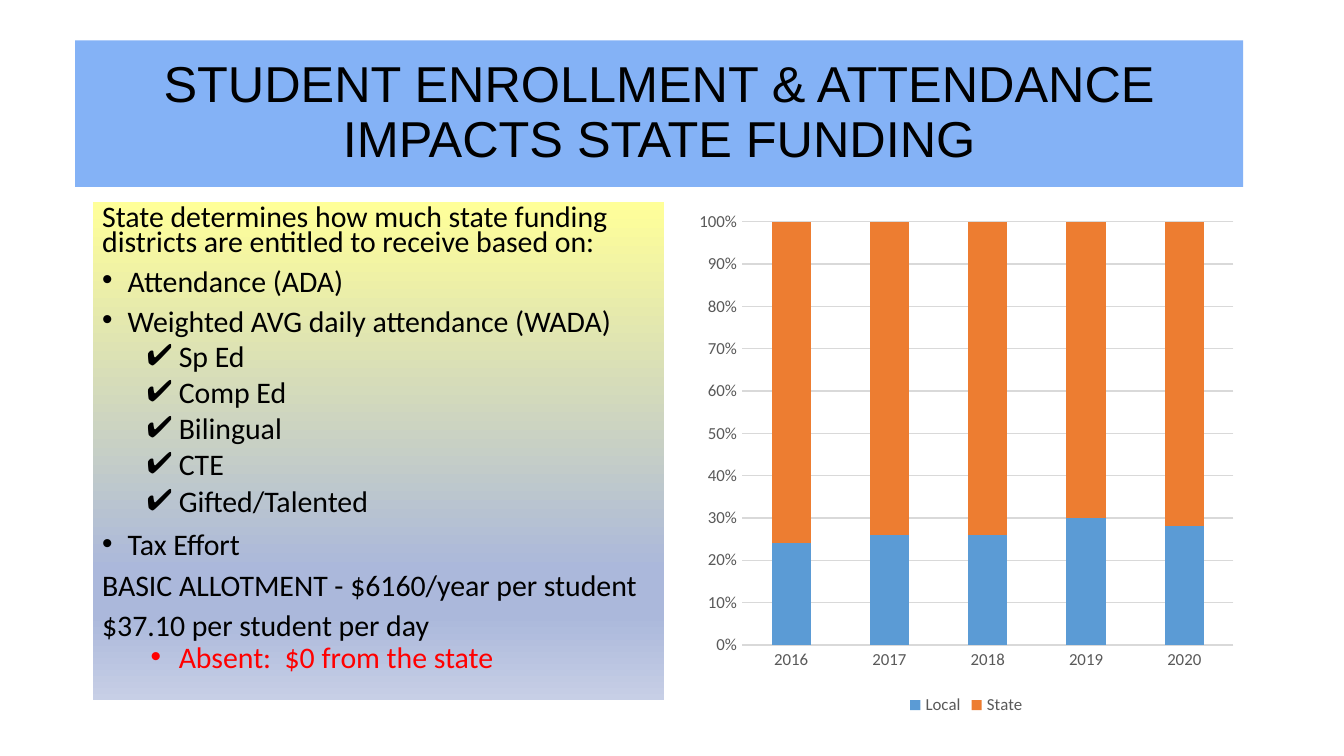
from dataclasses import dataclass

import pptx
import pptx.chart.data
import pptx.dml.color
import pptx.enum.chart
import pptx.enum.text
import pptx.oxml
import pptx.oxml.ns
import pptx.util
from pptx.util import Inches


@dataclass(frozen=True)
class Theme:
    banner: str = "84B2F6"
    text: str = "000000"
    alert: str = "FF0000"
    axis_text: str = "595959"
    grid: str = "D9D9D9"
    local: str = "5B9BD5"
    state: str = "ED7D31"
    panel: tuple = ((0, "FFFF99"), (74, "ABB8DB"), (83, "ABB8DB"), (100, "C7CFE6"))
    title_font: str = "Arial"
    body_font: str = "Calibri"
    title_size: float = 27
    body_size: float = 16
    axis_size: float = 9


@dataclass(frozen=True)
class Box:
    left: float
    top: float
    width: float
    height: float

    def lengths(self) -> tuple:
        return tuple(Inches(v) for v in (self.left, self.top, self.width, self.height))


@dataclass(frozen=True)
class Style:
    level: int = 0
    margin: float = 0
    hanging: float = 0
    spacing: float = 0.7
    before: float = 8
    bullet: str = ""
    color: str = Theme.text


@dataclass(frozen=True)
class Line:
    text: str
    style: Style


THEME = Theme()
INTRO = Style(before=0)
PLAIN = Style()
FACTOR = Style(margin=0.19, hanging=0.19, bullet="•")
EFFORT = Style(margin=0.19, hanging=0.19, bullet="•", spacing=0.8)
PROGRAM = Style(level=1, margin=0.57, hanging=0.24, bullet="✔", spacing=0.8, before=4)
ABSENCE = Style(level=1, margin=0.57, hanging=0.21, bullet="•", before=4, color=THEME.alert)

FUNDING_LINES = [
    Line("State determines how much state funding districts are entitled to receive based on:", INTRO),
    Line("Attendance (ADA)", FACTOR),
    Line("Weighted AVG daily attendance (WADA)", FACTOR),
    *(Line(name, PROGRAM) for name in ("Sp Ed", "Comp Ed", "Bilingual", "CTE", "Gifted/Talented")),
    Line("Tax Effort", EFFORT),
    Line("BASIC ALLOTMENT - $6160/year per student", PLAIN),
    Line("$37.10 per student per day", PLAIN),
    Line("Absent:  $0 from the state", ABSENCE),
]
YEARS = ("2016", "2017", "2018", "2019", "2020")
LOCAL_SHARE = (24, 26, 26, 30, 28)


def rgb(color: str) -> pptx.dml.color.RGBColor:
    return pptx.dml.color.RGBColor.from_string(color)


def set_font(font, name: str, size: float, color: str) -> None:
    font.name = name
    font.size = pptx.util.Pt(size)
    font.color.rgb = rgb(color)


def place(holder, box: Box) -> None:
    holder.left, holder.top, holder.width, holder.height = box.lengths()
    frame = holder.text_frame
    frame.auto_size = pptx.enum.text.MSO_AUTO_SIZE.NONE
    frame.word_wrap = True
    frame.margin_left = frame.margin_right = Inches(0.07)
    frame.margin_top = frame.margin_bottom = Inches(0.04)


def xml(tag: str, attributes: str, content: str = ""):
    namespace = pptx.oxml.ns.nsdecls("a")
    return pptx.oxml.parse_xml(f"<a:{tag} {namespace} {attributes}>{content}</a:{tag}>")


def fill_gradient(holder, stops: tuple) -> None:
    holder.fill.gradient()
    holder.fill.gradient_angle = 270
    stop_list = holder.fill._fill._gradFill.find(pptx.oxml.ns.qn("a:gsLst"))
    for stop in list(stop_list):
        stop_list.remove(stop)
    for percent, color in stops:
        stop_list.append(xml("gs", f'pos="{percent * 1000}"', f'<a:srgbClr val="{color}"/>'))


def format_line(paragraph, line: Line) -> None:
    style = line.style
    paragraph.text = line.text
    paragraph.level = style.level
    paragraph.line_spacing = style.spacing
    paragraph.space_before = pptx.util.Pt(style.before)
    set_font(paragraph.runs[0].font, THEME.body_font, THEME.body_size, style.color)
    properties = paragraph._p.get_or_add_pPr()
    properties.set("marL", str(Inches(style.margin)))
    properties.set("indent", str(-Inches(style.hanging)))
    if style.bullet:
        properties.append(xml("buClr", "", f'<a:srgbClr val="{style.color}"/>'))
        properties.append(xml("buFont", f'typeface="{THEME.title_font}"'))
        properties.append(xml("buChar", f'char="{style.bullet}"'))
    else:
        properties.append(xml("buNone", ""))


def draw_banner(title, box: Box) -> None:
    place(title, box)
    title.fill.solid()
    title.fill.fore_color.rgb = rgb(THEME.banner)
    title.text_frame.text = "STUDENT ENROLLMENT & ATTENDANCE IMPACTS STATE FUNDING"
    title.text_frame.vertical_anchor = pptx.enum.text.MSO_ANCHOR.MIDDLE
    heading = title.text_frame.paragraphs[0]
    heading.alignment = pptx.enum.text.PP_ALIGN.CENTER
    heading.line_spacing = 0.9
    set_font(heading.runs[0].font, THEME.title_font, THEME.title_size, THEME.text)


def draw_funding_rules(body, box: Box) -> None:
    place(body, box)
    fill_gradient(body, THEME.panel)
    frame = body.text_frame
    frame.vertical_anchor = pptx.enum.text.MSO_ANCHOR.TOP
    for index, line in enumerate(FUNDING_LINES):
        format_line(frame.add_paragraph() if index else frame.paragraphs[0], line)


def draw_funding_split(slide, box: Box) -> None:
    shares = pptx.chart.data.CategoryChartData()
    shares.categories = YEARS
    shares.add_series("Local", LOCAL_SHARE)
    shares.add_series("State", [100 - local for local in LOCAL_SHARE])
    chart = slide.shapes.add_chart(
        pptx.enum.chart.XL_CHART_TYPE.COLUMN_STACKED_100, *box.lengths(), shares
    ).chart
    set_font(chart.font, THEME.body_font, THEME.axis_size, THEME.axis_text)
    chart.has_title = False
    chart.has_legend = True
    chart.legend.position = pptx.enum.chart.XL_LEGEND_POSITION.BOTTOM
    chart.legend.include_in_layout = False

    plot = chart.plots[0]
    plot.gap_width = 150
    plot.overlap = 100
    plot.vary_by_categories = False
    for series, color in zip(plot.series, (THEME.local, THEME.state)):
        series.format.fill.solid()
        series.format.fill.fore_color.rgb = rgb(color)

    years, percent = chart.category_axis, chart.value_axis
    for axis in (years, percent):
        axis.major_tick_mark = axis.minor_tick_mark = pptx.enum.chart.XL_TICK_MARK.NONE
    percent.has_major_gridlines = True
    percent.major_unit = 0.1
    percent.tick_labels.number_format = "0%"
    percent.tick_labels.number_format_is_linked = False
    percent.format.line.fill.background()
    for line in (years.format.line, percent.major_gridlines.format.line):
        line.color.rgb = rgb(THEME.grid)
        line.width = pptx.util.Pt(0.75)


def main() -> None:
    deck = pptx.Presentation()
    deck.slide_width = Inches(10)
    deck.slide_height = deck.slide_width * 9 // 16
    slide = deck.slides.add_slide(deck.slide_layouts[1])
    draw_banner(slide.shapes.title, Box(0.56, 0.3, 8.69, 1.09))
    draw_funding_rules(slide.placeholders[1], Box(0.69, 1.5, 4.25, 3.71))
    draw_funding_split(slide, Box(5.12, 1.5, 4.14, 3.86))
    deck.save("out.pptx")


if __name__ == "__main__":
    main()
